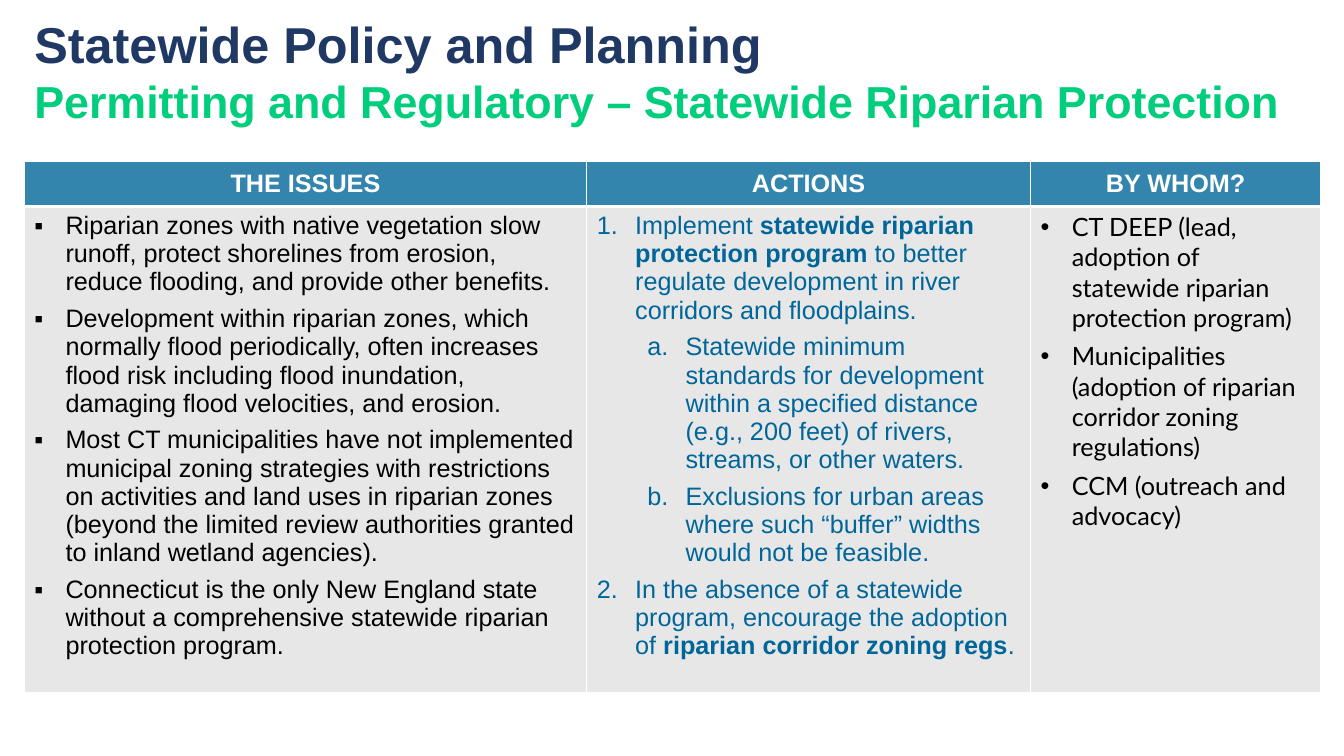
from lxml import etree
from pptx import Presentation
from pptx import util as u
from pptx.dml.color import RGBColor
from pptx.enum import text
from pptx.oxml.ns import qn

PX = 9144
COLORS = {
    "navy": "203864", "green": "00CE7D", "header": "3385AD",
    "body": "E7E7E7", "white": "FFFFFF", "black": "000000", "action": "006699",
}
HEADINGS = ["THE ISSUES", "ACTIONS", "BY WHOM?"]
ISSUES = [
    "Riparian zones with native vegetation slow runoff, protect shorelines from erosion, reduce flooding, and provide other benefits.",
    "Development within riparian zones, which normally flood periodically, often increases flood risk including flood inundation, damaging flood velocities, and erosion.",
    "Most CT municipalities have not implemented municipal zoning strategies with restrictions on activities and land uses in riparian zones (beyond the limited review authorities granted to inland wetland agencies).",
    "Connecticut is the only New England state without a comprehensive statewide riparian protection program.",
]
ACTIONS = [
    (0, ["Implement ", "statewide riparian protection program ",
         "to better regulate development in river corridors and floodplains."]),
    (1, ["Statewide minimum standards for development within a specified distance (e.g., 200 feet) of rivers, streams, or other waters."]),
    (1, ["Exclusions for urban areas where such “buffer” widths would not be feasible."]),
    (0, ["In the absence of a statewide program, encourage the adoption of ",
         "riparian corridor zoning regs", "."]),
]
PARTIES = [
    "CT DEEP (lead, adoption of statewide riparian protection program)",
    "Municipalities (adoption of riparian corridor zoning regulations)",
    "CCM (outreach and advocacy)",
]
COLUMNS = [
    ([(0, [issue]) for issue in ISSUES], "Arial", "black", 31, [("buChar", "char", "▪")]),
    (ACTIONS, "Arial", "action", 38,
     [("buAutoNum", "type", "arabicPeriod"), ("buAutoNum", "type", "alphaLcPeriod")]),
    ([(0, [party]) for party in PARTIES], "Lato", "black", 31, [("buChar", "char", "•")]),
]


def add_run(paragraph, words, font, size, color, bold):
    run = paragraph.add_run()
    run.text = words
    run.font.name = font
    run.font.size = u.Pt(size)
    run.font.bold = bold
    run.font.color.rgb = RGBColor.from_string(COLORS[color])


def style_cell(cell, fill, bottom):
    properties = cell._tc.get_or_add_tcPr()
    for side, width in (("lnL", 1), ("lnR", 1), ("lnT", 4 - bottom), ("lnB", bottom)):
        line = etree.SubElement(properties, qn(f"a:{side}"), w=str(u.Pt(width)))
        solid = etree.SubElement(line, qn("a:solidFill"))
        etree.SubElement(solid, qn("a:srgbClr"), val=COLORS["white"])
    cell.fill.solid()
    cell.fill.fore_color.rgb = RGBColor.from_string(COLORS[fill])


presentation = Presentation()
presentation.slide_width = 1333 * PX
presentation.slide_height = 750 * PX
slide = presentation.slides.add_slide(presentation.slide_layouts[5])

title = slide.shapes.title
title.left, title.top, title.width, title.height = [n * PX for n in (24, 40, 1286, 59)]
title.text_frame.word_wrap = True
title.text_frame.auto_size = text.MSO_AUTO_SIZE.NONE
title.text_frame.vertical_anchor = text.MSO_ANCHOR.MIDDLE
heading = title.text_frame.paragraphs[0]
heading.alignment = text.PP_ALIGN.LEFT
add_run(heading, "Statewide Policy and Planning", "Arial", 36, "navy", True)
heading.add_line_break()
add_run(heading, "Permitting and Regulatory – Statewide Riparian Protection", "Arial", 32, "green", True)

table = slide.shapes.add_table(2, 3, 24 * PX, 160 * PX, 1286 * PX, 527 * PX).table
for column, width in zip(table.columns, (558, 440, 288)):
    column.width = width * PX
for row, height in zip(table.rows, (45, 482)):
    row.height = height * PX

for index, words in enumerate(HEADINGS):
    cell = table.cell(0, index)
    style_cell(cell, "header", 3)
    cell.vertical_anchor = text.MSO_ANCHOR.MIDDLE
    paragraph = cell.text_frame.paragraphs[0]
    paragraph.alignment = text.PP_ALIGN.CENTER
    add_run(paragraph, words, "Arial", 18, "white", True)

for index, (items, font, color, hang, bullets) in enumerate(COLUMNS):
    cell = table.cell(1, index)
    style_cell(cell, "body", 1)
    for position, (level, pieces) in enumerate(items):
        frame = cell.text_frame
        paragraph = frame.add_paragraph() if position else frame.paragraphs[0]
        paragraph.level = level
        paragraph.space_after = u.Pt(6)
        properties = paragraph._p.get_or_add_pPr()
        properties.set("marL", str((hang + 50 * level) * PX))
        properties.set("indent", str(-hang * PX))
        etree.SubElement(properties, qn("a:buFont"), typeface="Arial")
        tag, key, value = bullets[level]
        etree.SubElement(properties, qn(f"a:{tag}"), {key: value})
        for order, words in enumerate(pieces):
            add_run(paragraph, words, font, 18, color, order == 1)

presentation.save("out.pptx")
